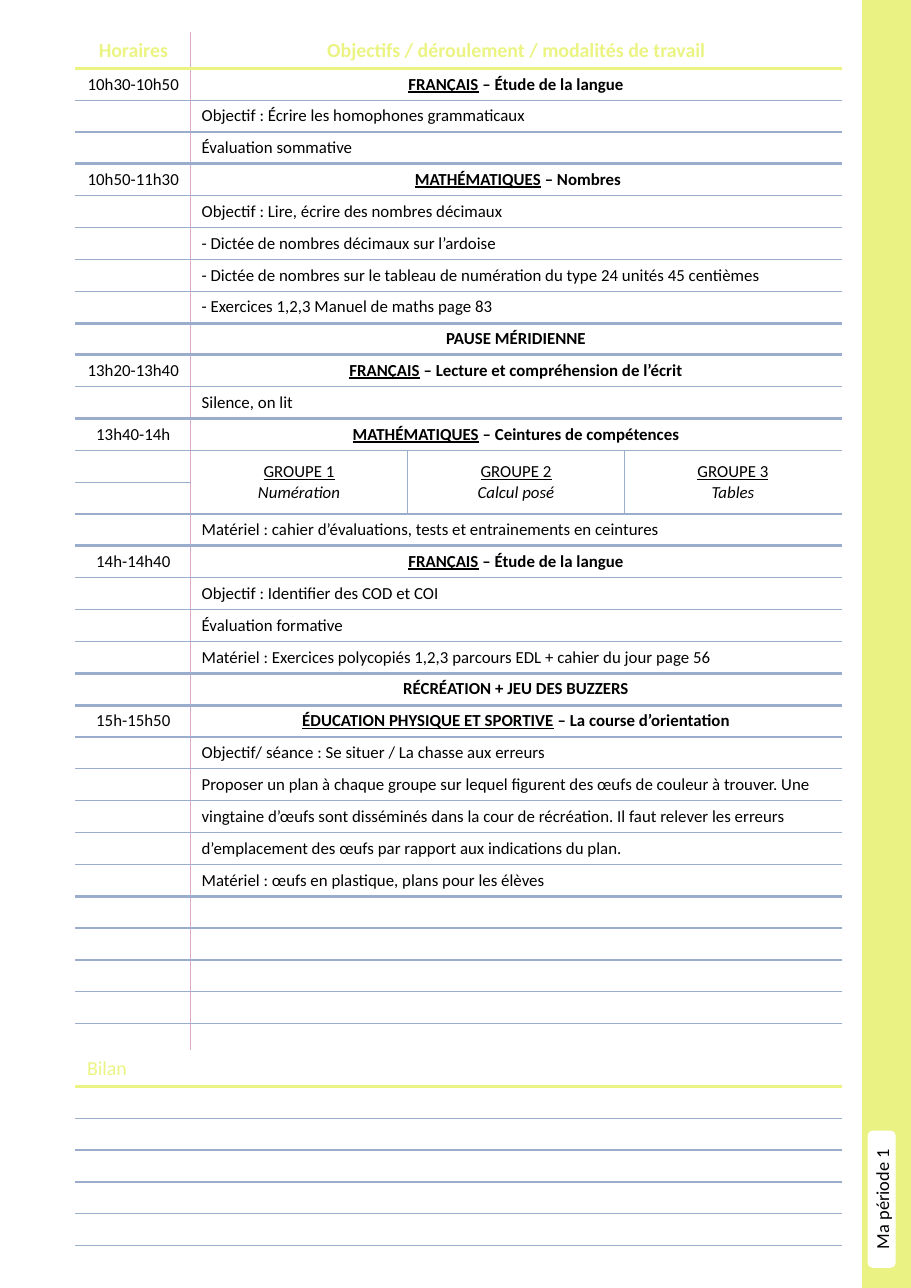
from dataclasses import dataclass
from typing import NamedTuple

from lxml.etree import SubElement
from pptx import Presentation
from pptx.dml.color import RGBColor
from pptx.enum.shapes import MSO_SHAPE as Preset
from pptx.enum.text import MSO_ANCHOR as Anchor, PP_ALIGN as Align
from pptx.oxml.ns import qn
from pptx.util import Pt

COLORS = {"lime": "EAF283", "heading": "EBF482", "rule": "9BADCD",
          "margin": "DCA9CC", "white": "FFFFFF", "text": "000000"}
FONT = "Calibri"
PAGE_WIDTH, PAGE_HEIGHT = 595.4, 841.7
LEFT, HOURS_WIDTH, GROUP_WIDTH = 49.7, 74.9, 141.8
HEADER_HEIGHT, ROW_HEIGHT = 23.1, 20.8
BLANK_ROWS, SUMMARY_ROWS = 5, 5
THIN, THICK = 1, 2.25


class Span(NamedTuple):
    text: str
    bold: bool = False
    underline: bool = False
    italic: bool = False
    size: float = 11
    color: str = "text"


class Edge(NamedTuple):
    color: str = "white"
    width: float = THIN


@dataclass
class Session:
    hours: str
    title: list[Span]
    lines: tuple[str, ...] = ()
    groups: tuple[tuple[str, str], ...] = ()


@dataclass
class Row:
    hours: str = ""
    spans: tuple[Span, ...] = ()
    centered: bool = False
    groups: tuple[tuple[str, str], ...] = ()
    bottom: Edge = Edge("rule")


def lesson(subject: str, topic: str) -> list[Span]:
    return [Span(subject, bold=True, underline=True), Span(f" – {topic}", bold=True)]


def pause(name: str) -> Session:
    return Session("", [Span(name, bold=True)])


SESSIONS = [
    Session("10h30-10h50", lesson("FRANÇAIS", "Étude de la langue"),
            ("Objectif : Écrire les homophones grammaticaux", "Évaluation sommative")),
    Session("10h50-11h30", [Span(" "), *lesson("MATHÉMATIQUES", "Nombres")],
            ("Objectif : Lire, écrire des nombres décimaux",
             "- Dictée de nombres décimaux sur l’ardoise",
             "- Dictée de nombres sur le tableau de numération du type 24 unités 45 centièmes",
             "- Exercices 1,2,3 Manuel de maths page 83")),
    pause("PAUSE MÉRIDIENNE"),
    Session("13h20-13h40", lesson("FRANÇAIS", "Lecture et compréhension de l’écrit"),
            ("Silence, on lit",)),
    Session("13h40-14h", lesson("MATHÉMATIQUES", "Ceintures de compétences"),
            ("Matériel : cahier d’évaluations, tests et entrainements en ceintures",),
            (("GROUPE 1", "Numération"), ("GROUPE 2", "Calcul posé"), ("GROUPE 3", "Tables"))),
    Session("14h-14h40", lesson("FRANÇAIS", "Étude de la langue"),
            ("Objectif : Identifier des COD et COI", "Évaluation formative",
             "Matériel : Exercices polycopiés 1,2,3 parcours EDL + cahier du jour page 56")),
    pause("RÉCRÉATION + JEU DES BUZZERS"),
    Session("15h-15h50", lesson("ÉDUCATION PHYSIQUE ET SPORTIVE", "La course d’orientation"),
            ("Objectif/ séance : Se situer / La chasse aux erreurs",
             "Proposer un plan à chaque groupe sur lequel figurent des œufs de couleur à trouver. Une",
             "vingtaine d’œufs sont disséminés dans la cour de récréation. Il faut relever les erreurs",
             "d’emplacement des œufs par rapport aux indications du plan.",
             "Matériel : œufs en plastique, plans pour les élèves")),
]


def rgb(name: str) -> RGBColor:
    return RGBColor.from_string(COLORS[name])


def write(para, spans, align=Align.LEFT) -> None:
    para.alignment = align
    for span in spans:
        run = para.add_run()
        run.text = span.text
        font = run.font
        font.name, font.size = FONT, Pt(span.size)
        font.bold, font.underline, font.italic = span.bold, span.underline, span.italic
        font.color.rgb = rgb(span.color)
    if not spans:
        SubElement(para._p, qn("a:endParaRPr"), sz="1100")


def style_cell(cell, left: Edge, right: Edge, top: Edge, bottom: Edge) -> None:
    """Rule the four sides of a cell and paint it white."""
    properties = cell._tc.get_or_add_tcPr()
    for side, edge in zip("LRTB", (left, right, top, bottom)):
        line = SubElement(properties, qn(f"a:ln{side}"), w=str(Pt(edge.width)))
        fill = SubElement(line, qn("a:solidFill"))
        SubElement(fill, qn("a:srgbClr"), val=COLORS[edge.color])
    cell.fill.solid()
    cell.fill.fore_color.rgb = rgb("white")


def add_grid(page, top: float, widths: list[float], row_count: int):
    height = HEADER_HEIGHT + (row_count - 1) * ROW_HEIGHT
    grid = page.shapes.add_table(row_count, len(widths), Pt(LEFT), Pt(top),
                                 Pt(sum(widths)), Pt(height)).table
    grid.first_row = grid.horz_banding = False
    for column, width in zip(grid.columns, widths):
        column.width = Pt(width)
    for index, row in enumerate(grid.rows):
        row.height = Pt(ROW_HEIGHT if index else HEADER_HEIGHT)
    return grid


def timetable_rows() -> list[Row]:
    def heading(text: str) -> Span:
        return Span(text, bold=True, size=13, color="heading")

    rows = [Row("Horaires", (heading("Objectifs / déroulement / modalités de travail"),),
                True, bottom=Edge("heading", THICK))]
    for session in SESSIONS:
        rows.append(Row(session.hours, tuple(session.title), True))
        if session.groups:
            rows += [Row(groups=session.groups), Row(groups=session.groups)]
        rows += [Row(spans=(Span(line),)) for line in session.lines]
        rows[-1].bottom = Edge("rule", THICK)
    return rows + [Row() for _ in range(BLANK_ROWS)]


def add_timetable(page) -> None:
    rows = timetable_rows()
    grid = add_grid(page, 21.6, [HOURS_WIDTH] + [GROUP_WIDTH] * 3, len(rows))
    margin, top = Edge("margin"), Edge()
    for index, row in enumerate(rows):
        hours, *cells = (grid.cell(index, column) for column in range(4))
        style_cell(hours, Edge(), margin, top, row.bottom)
        hours_span = row.spans[0]._replace(text=row.hours) if index == 0 else Span(row.hours)
        write(hours.text_frame.paragraphs[0], [hours_span] if row.hours else [], Align.CENTER)
        inner = Edge("rule") if row.groups else Edge()
        for column, cell in enumerate(cells):
            style_cell(cell, inner if column else margin,
                       inner if column < 2 else Edge(), top, row.bottom)
        top = row.bottom
        if row.groups and rows[index - 1].groups:
            for cell in cells:
                write(cell.text_frame.paragraphs[0], [])
        elif row.groups:
            for column, (cell, (name, topic)) in enumerate(zip(cells, row.groups), 1):
                cell.merge(grid.cell(index + 1, column))
                cell.vertical_anchor = Anchor.MIDDLE
                frame = cell.text_frame
                write(frame.paragraphs[0], [Span(name, underline=True)], Align.CENTER)
                write(frame.add_paragraph(), [Span(topic, italic=True)], Align.CENTER)
        else:
            cells[0].merge(cells[-1])
            align = Align.CENTER if row.centered else Align.LEFT
            for cell, spans in zip(cells, (row.spans, (), ())):
                write(cell.text_frame.paragraphs[0], spans, align)


def add_summary(page) -> None:
    grid = add_grid(page, 686.9, [250.1, 250.2], SUMMARY_ROWS + 1)
    top = Edge()
    for index in range(SUMMARY_ROWS + 1):
        bottom = Edge("rule") if index else Edge("heading", THICK)
        cells = [grid.cell(index, column) for column in range(2)]
        for cell in cells:
            style_cell(cell, Edge(), Edge(), top, bottom)
        title = [] if index else [Span("Bilan", size=13, color="heading")]
        for cell, spans in zip(cells, (title, [])):
            write(cell.text_frame.paragraphs[0], spans)
        if index:
            cells[0].merge(cells[1])
        top = bottom


def add_box(page, preset, left: float, top: float, width: float, height: float, color: str):
    box = page.shapes.add_shape(preset, Pt(left), Pt(top), Pt(width), Pt(height))
    box.shadow.inherit = False
    box.fill.solid()
    box.fill.fore_color.rgb = box.line.color.rgb = rgb(color)
    box.line.width = Pt(1)
    return box


def add_period_tab(page) -> None:
    add_box(page, Preset.RECTANGLE, 563.8, 0, 31.2, PAGE_HEIGHT, "lime")
    tab = add_box(page, Preset.ROUNDED_RECTANGLE, 567.6, 739.4, 17.3, 88.6, "white")
    frame = tab.text_frame
    frame.vertical_anchor = Anchor.MIDDLE
    frame.margin_left = frame.margin_right = frame.margin_top = frame.margin_bottom = 0
    frame._txBody.bodyPr.set("vert", "vert270")
    write(frame.paragraphs[0], [Span("Ma période 1", size=12)], Align.CENTER)


def main() -> None:
    deck = Presentation()
    deck.slide_width, deck.slide_height = Pt(PAGE_WIDTH), Pt(PAGE_HEIGHT)
    page = deck.slides.add_slide(deck.slide_layouts[6])
    add_period_tab(page)
    add_timetable(page)
    add_summary(page)
    deck.save("out.pptx")


if __name__ == "__main__":
    main()
